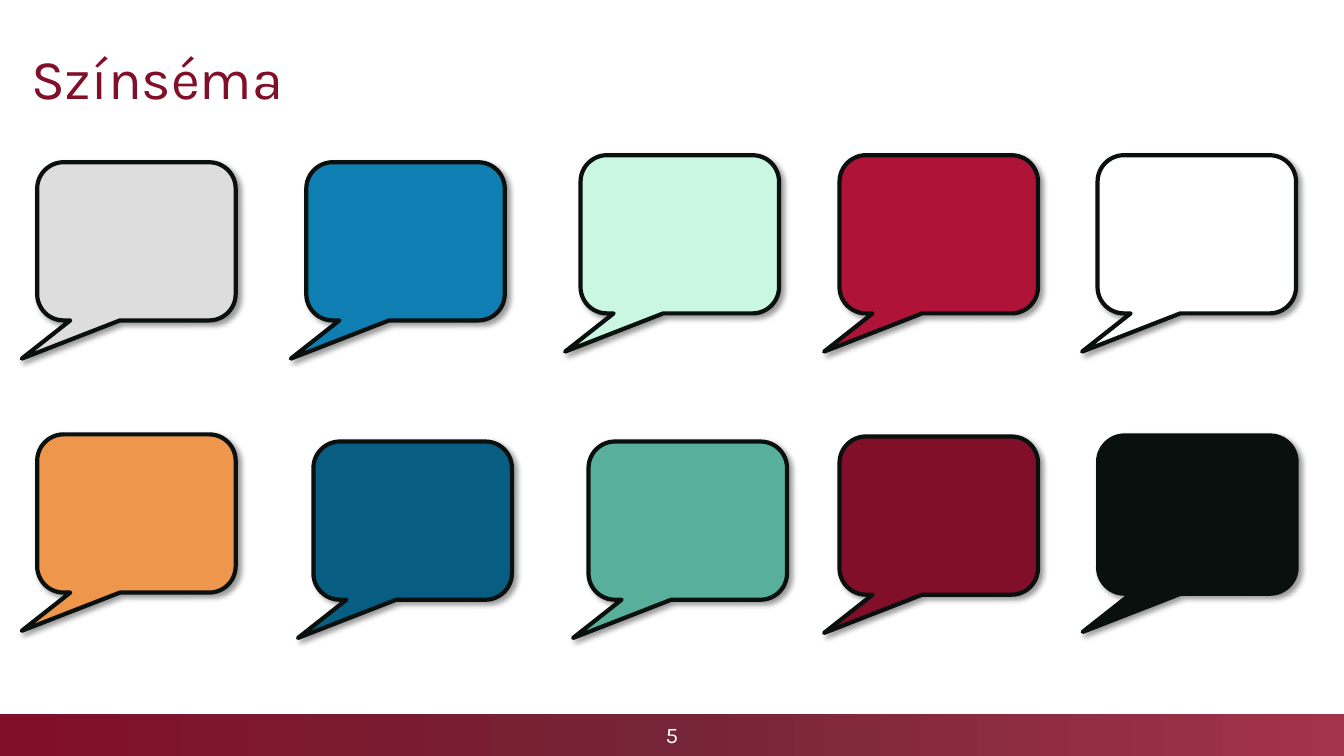
from copy import deepcopy

from lxml import etree
from pptx import Presentation
from pptx.dml.color import RGBColor
from pptx.enum.shapes import MSO_SHAPE
from pptx.enum.text import MSO_ANCHOR, PP_ALIGN
from pptx.oxml.ns import qn
from pptx.util import Pt

RECT = MSO_SHAPE.RECTANGLE
BUBBLE = MSO_SHAPE.ROUNDED_RECTANGULAR_CALLOUT
MIDDLE = MSO_ANCHOR.MIDDLE
LEFT, CENTER = PP_ALIGN.LEFT, PP_ALIGN.CENTER

FONT = "Karla"
WIDE, HIGH = 960, 540
COLORS = {
    "white": "FFFFFF", "black": "0A100D", "shade": "000000",
    "gray": "DDDDDD", "orange": "EE964B",
    "blue": "0F7EB2", "navy": "085D83",
    "mint": "CAF7E2", "teal": "58B09C",
    "red": "AF1438", "wine": "810F29",
    "plum": "762536", "rose": "A3334B",
}
# Each swatch: color, left and top within the palette
SWATCHES = [
    ("gray", 0, 5), ("blue", 192.2, 5), ("mint", 388.1, 0),
    ("red", 573.1, 0), ("white", 757.4, 0),
    ("orange", 0, 199.4), ("navy", 197.3, 204.5), ("teal", 393.8, 204.5),
    ("wine", 573.1, 200.9), ("black", 757.8, 200.2),
]
BUBBLE_W, BUBBLE_H = 141.8, 113
TAIL = (-0.578, 0.742, 0.167)


def rgb(name):
    return RGBColor.from_string(COLORS[name])


def write(shape, text, size, color, align):
    frame = shape.text_frame
    frame.vertical_anchor = MIDDLE
    para = frame.paragraphs[0]
    para.alignment = align
    run = para.add_run()
    run.text = text
    run.font.name = FONT
    run.font.size = Pt(size)
    run.font.color.rgb = rgb(color)
    return frame


def cast(shape):
    """Add a soft shadow toward the lower right."""
    shape.shadow.inherit = False
    effects = shape._element.spPr.find(qn("a:effectLst"))
    outer = etree.SubElement(
        effects, qn("a:outerShdw"), blurRad=str(Pt(4)), dist=str(Pt(3)),
        dir=str(45 * 60000), algn="tl", rotWithShape="0")
    tone = etree.SubElement(outer, qn("a:srgbClr"), val=COLORS["shade"])
    etree.SubElement(tone, qn("a:alpha"), val="40000")


def add_bar(slide, x, y, w, h):
    bar = slide.shapes.add_shape(RECT, Pt(x), Pt(y), Pt(w), Pt(h))
    bar.shadow.inherit = False
    bar.line.fill.background()
    bar.fill.gradient()
    bar.fill.gradient_angle = 0
    # A third stop for the middle tone
    stops = bar._element.spPr.find(".//" + qn("a:gsLst"))
    stops.insert(1, deepcopy(stops[0]))
    tones = ("wine", "plum", "rose")
    for i, (stop, tone) in enumerate(zip(bar.fill.gradient_stops, tones)):
        stop.color.rgb = rgb(tone)
        stop.position = i / 2
    write(bar, "5", 16, "white", CENTER).word_wrap = False


def add_title(slide, x, y, w, h):
    box = slide.shapes.add_textbox(Pt(x), Pt(y), Pt(w), Pt(h))
    write(box, "Színséma", 40, "wine", LEFT).word_wrap = True


def add_palette(slide, x, y):
    for color, dx, dy in SWATCHES:
        bubble = slide.shapes.add_shape(
            BUBBLE, Pt(x + dx), Pt(y + dy), Pt(BUBBLE_W), Pt(BUBBLE_H))
        for i, value in enumerate(TAIL):
            bubble.adjustments[i] = value
        bubble.fill.solid()
        bubble.fill.fore_color.rgb = rgb(color)
        bubble.line.color.rgb = rgb("black")
        bubble.line.width = Pt(3)
        cast(bubble)


def main():
    deck = Presentation()
    deck.slide_width, deck.slide_height = Pt(WIDE), Pt(HIGH)
    slide = deck.slides.add_slide(deck.slide_layouts[6])
    add_bar(slide, 0, HIGH - 30, WIDE, 30)
    add_title(slide, 15.1, 7.9, 930, 93.7)
    add_palette(slide, 26.6, 110.9)
    deck.save("out.pptx")


if __name__ == "__main__":
    main()
